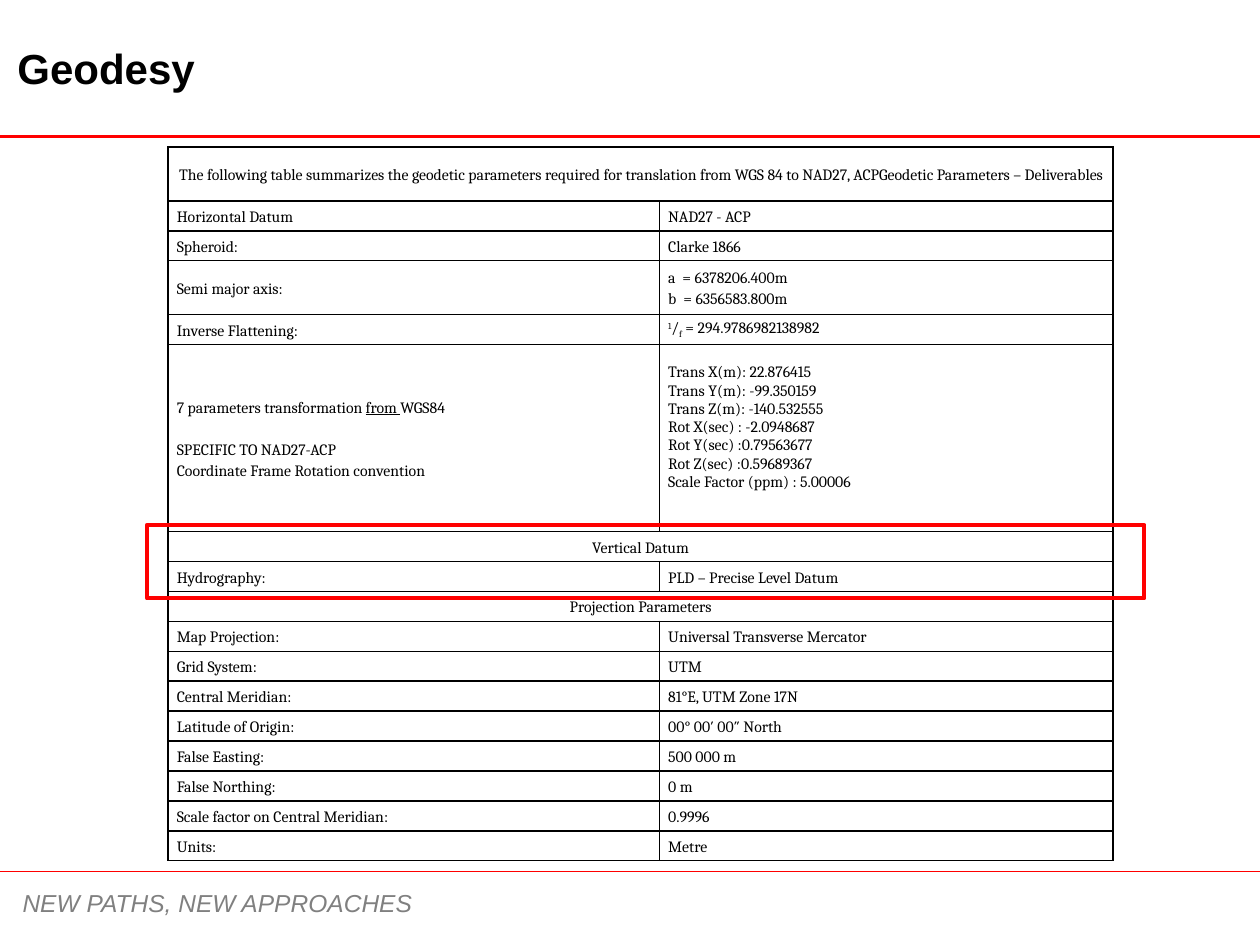
from dataclasses import dataclass
from lxml import etree
from pptx import Presentation
from pptx.dml.color import RGBColor
from pptx.enum.shapes import MSO_CONNECTOR, MSO_SHAPE
from pptx.enum.text import MSO_ANCHOR, PP_ALIGN
from pptx.oxml.ns import qn
from pptx.util import Pt

STRAIGHT = MSO_CONNECTOR.STRAIGHT
RECTANGLE = MSO_SHAPE.RECTANGLE
MIDDLE = MSO_ANCHOR.MIDDLE
CENTER, LEFT = PP_ALIGN.CENTER, PP_ALIGN.LEFT


@dataclass(frozen=True)
class Theme:
    red = RGBColor(0xFF, 0, 0)
    black = RGBColor(0, 0, 0)
    grey = RGBColor(0x80, 0x80, 0x80)
    heading_font = "Arial"
    table_font = "Cambria"
    title_size = 24
    footer_size = 14
    table_size = 9
    line_pitch = 12


theme = Theme()


def add_run(paragraph, text, font, size, color):
    run = paragraph.add_run()
    run.text = text
    run.font.name, run.font.size = font, Pt(size)
    run.font.color.rgb = color
    return run


def border_cell(cell):
    properties = cell._tc.get_or_add_tcPr()
    for position, side in enumerate(("lnL", "lnR", "lnT", "lnB")):
        line = etree.Element(qn(f"a:{side}"), w=str(Pt(1)))
        fill = etree.SubElement(line, qn("a:solidFill"))
        etree.SubElement(fill, qn("a:srgbClr"), val=str(theme.black))
        properties.insert(position, line)


deck = Presentation()
deck.slide_width, deck.slide_height = Pt(720), Pt(540)
slide = deck.slides.add_slide(deck.slide_layouts[6])

# Rules under the title and above the footer
for start, y, weight in ((84, 498, 0.75), (0, 78, 2.25), (0, 498, 0.75)):
    rule = slide.shapes.add_connector(STRAIGHT, Pt(start), Pt(y), Pt(720), Pt(y))
    rule.line.color.rgb = theme.red
    rule.line.width = Pt(weight)
    etree.SubElement(rule._element.spPr, qn("a:effectLst"))

# Footer motto
footer = slide.shapes.add_textbox(Pt(5.8), Pt(504), Pt(252), Pt(24.5)).text_frame
footer.word_wrap = True
motto = add_run(footer.paragraphs[0], "NEW PATHS, NEW APPROACHES",
                theme.heading_font, theme.footer_size, theme.grey)
motto.font.italic = True

# Title
title = slide.shapes.add_textbox(Pt(2.9), Pt(21), Pt(116.6), Pt(36)).text_frame
title.word_wrap = False
heading = add_run(title.paragraphs[0], "Geodesy",
                  theme.heading_font, theme.title_size, theme.black)
heading.font.bold = True

# Table content: one entry spans the row; a list holds paragraphs,
# and a tuple inside it holds (text, style) runs
SUPER, SUB, UNDERLINE = "30000", "-25000", "underline"
rows = [
    ["The following table summarizes the geodetic parameters required for "
     "translation from WGS 84 to NAD27, ACPGeodetic Parameters – Deliverables"],
    ["Horizontal Datum", "NAD27 - ACP"],
    ["Spheroid:", "Clarke 1866"],
    ["Semi major axis:", ["a  = 6378206.400m", "b  = 6356583.800m"]],
    ["Inverse Flattening:",
     [(("1", SUPER), ("/", None), ("f", SUB), (" = 294.9786982138982", None))]],
    [[(("7 parameters transformation ", None), ("from ", UNDERLINE), ("WGS84", None)),
      "SPECIFIC TO NAD27-ACP", "Coordinate Frame Rotation convention"],
     ["Trans X(m): 22.876415", "Trans Y(m): -99.350159", "Trans Z(m): -140.532555",
      "Rot X(sec) : -2.0948687", "Rot Y(sec) :0.79563677", "Rot Z(sec) :0.59689367",
      "Scale Factor (ppm) : 5.00006"]],
    ["Vertical Datum"],
    ["Hydrography:", "PLD – Precise Level Datum"],
    ["Projection Parameters"],
    ["Map Projection:", "Universal Transverse Mercator"],
    ["Grid System:", "UTM"],
    ["Central Meridian:", "81°E, UTM Zone 17N"],
    ["Latitude of Origin:", "00° 00′ 00″ North"],
    ["False Easting:", "500 000 m"],
    ["False Northing:", "0 m"],
    ["Scale factor on Central Meridian:", "0.9996"],
    ["Units:", "Metre"],
]
TRANSFORMATION = 5
row_heights = {0: 30.8, 3: 30.8, TRANSFORMATION: 107}

# Geodetic parameter table
parameters = slide.shapes.add_table(
    len(rows), 2, Pt(96), Pt(84), Pt(540), Pt(408)).table
parameters.first_row = parameters.horz_banding = False
for column, width in zip(parameters.columns, (280.8, 259.2)):
    column.width = Pt(width)

for index, entries in enumerate(rows):
    parameters.rows[index].height = Pt(row_heights.get(index, 17.1))
    spans = len(entries) == 1
    if spans:
        parameters.cell(index, 0).merge(parameters.cell(index, 1))
    for side in range(2):
        cell = parameters.cell(index, side)
        cell.fill.background()
        border_cell(cell)
        cell.vertical_anchor = MIDDLE
        cell.margin_left = cell.margin_right = Pt(5.04)
        cell.margin_top = cell.margin_bottom = Pt(1.44)
        if side >= len(entries):
            continue
        content = entries[side]
        lines = content if isinstance(content, list) else [content]
        for number, line in enumerate(lines):
            frame = cell.text_frame
            paragraph = frame.add_paragraph() if number else frame.paragraphs[0]
            paragraph.alignment = CENTER if spans else LEFT
            if (index, side) != (TRANSFORMATION, 1):
                paragraph.line_spacing = Pt(theme.line_pitch)
            for text, style in (line if isinstance(line, tuple) else ((line, None),)):
                run = add_run(paragraph, text, theme.table_font,
                              theme.table_size, theme.black)
                if style == UNDERLINE:
                    run.font.underline = True
                elif style:
                    run.font._element.set("baseline", style)

# One line of air in the transformation row
convention, values = (parameters.cell(TRANSFORMATION, side) for side in range(2))
convention.text_frame.paragraphs[1].space_before = Pt(theme.line_pitch)
values.margin_bottom = Pt(1.44 + theme.line_pitch)

# Frame around the vertical datum
highlight = slide.shapes.add_shape(RECTANGLE, Pt(84), Pt(300), Pt(570), Pt(42))
highlight.shadow.inherit = False
highlight.fill.background()
highlight.line.color.rgb = theme.red
highlight.line.width = Pt(2.25)

deck.save("out.pptx")
